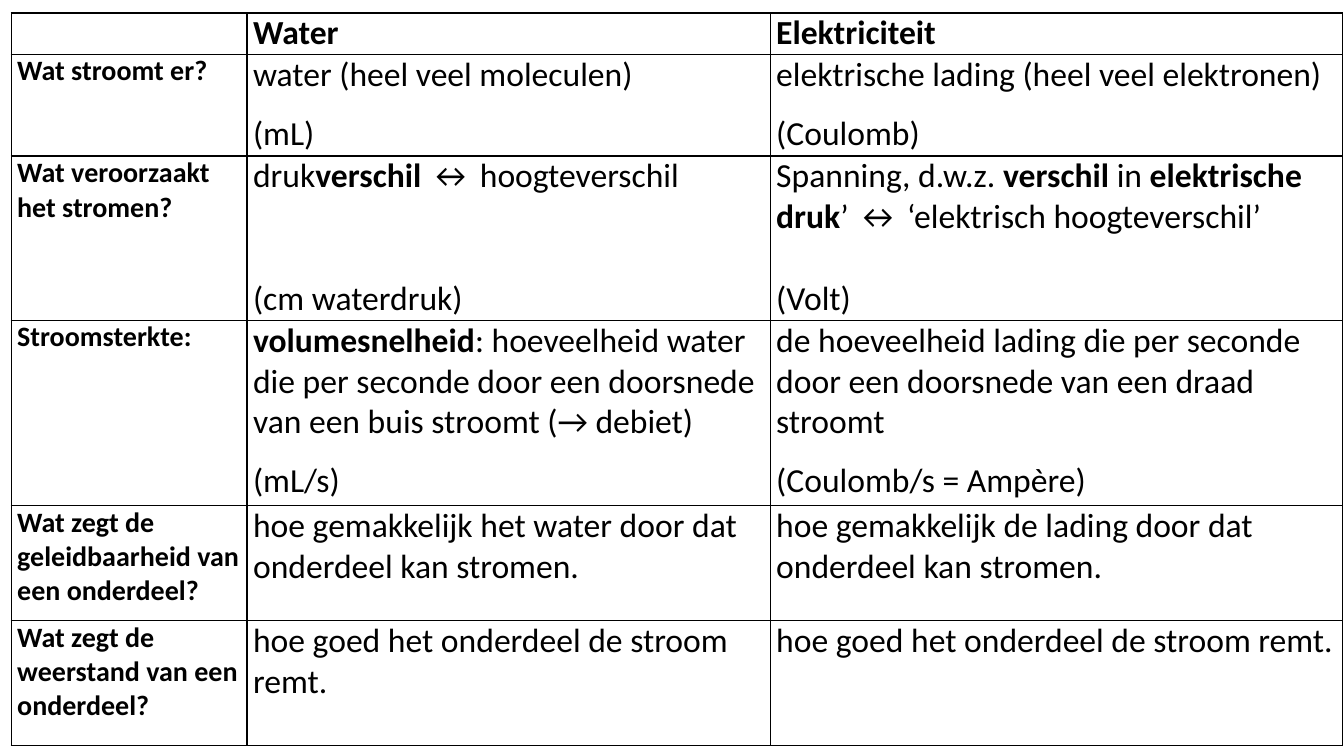
from pptx import Presentation
from pptx.dml.color import RGBColor as RGB
from pptx.oxml import parse_xml as parse
from pptx.oxml.ns import nsdecls
from pptx.util import Pt

BLACK = RGB(0, 0, 0)
FONT = "Calibri"
COLS = (168.5, 373.7, 409)
HEIGHTS = (29.5, 72.7, 89.3, 132.5, 82.1, 89.3)
SMALL, LINE = 12.8, 29.3
ROWS = (
    ("", ("**Water**",), ("**Elektriciteit**",)),
    ("Wat stroomt er?",
     ("water (heel veel moleculen)", "(mL)", SMALL),
     ("elektrische lading (heel veel elektronen)", "(Coulomb)", SMALL)),
    ("Wat veroorzaakt het stromen?",
     ("druk**verschil** ↔ hoogteverschil", "(cm waterdruk)", 2 * LINE),
     ("Spanning, d.w.z. **verschil** in **elektrische druk**’ ↔ "
      "‘elektrisch hoogteverschil’", "(Volt)", LINE)),
    ("Stroomsterkte:",
     ("**volumesnelheid**: hoeveelheid water die per seconde door een "
      "doorsnede van een buis stroomt (→ debiet)", "(mL/s)", SMALL),
     ("de hoeveelheid lading die per seconde door een doorsnede van een "
      "draad stroomt", "(Coulomb/s = Ampère)", SMALL)),
    ("Wat zegt de geleidbaarheid van een onderdeel?",
     ("hoe gemakkelijk het water door dat onderdeel kan stromen.",),
     ("hoe gemakkelijk de lading door dat onderdeel kan stromen.",)),
    ("Wat zegt de weerstand van een onderdeel?",
     ("hoe goed het onderdeel de stroom remt.",),
     ("hoe goed het onderdeel de stroom remt.",)),
)


def frame(cell):
    """Give a cell black borders, no fill and narrow margins."""
    props = cell._tc.get_or_add_tcPr()
    for side in "LRTB":
        props.append(parse(
            f'<a:ln{side} {nsdecls("a")} w="{Pt(1)}"><a:solidFill>'
            f'<a:srgbClr val="{BLACK}"/></a:solidFill></a:ln{side}>'))
    cell.fill.background()
    cell.margin_left = cell.margin_right = Pt(4.3)
    cell.margin_top = cell.margin_bottom = 0


def write(para, text, size):
    """Fill a paragraph, with the parts between double stars in bold."""
    font = para.font
    font.name, font.size = FONT, Pt(size)
    font.color.rgb = BLACK
    for i, part in enumerate(text.split("**")):
        if part:
            run = para.add_run()
            run.text, run.font.bold = part, i % 2 == 1


def answer(cell, text, unit="", gap=0):
    """Write a statement and, below a gap, its unit."""
    body = cell.text_frame
    write(body.paragraphs[0], text, 24)
    if unit:
        para = body.add_paragraph()
        para.space_before = Pt(gap)
        write(para, unit, 24)


def compare(slide, left, top):
    """Draw the table that compares water with electricity."""
    table = slide.shapes.add_table(
        len(ROWS), len(COLS), Pt(left), Pt(top),
        Pt(sum(COLS)), Pt(sum(HEIGHTS))).table
    table.first_row = table.horz_banding = False
    for col, width in zip(table.columns, COLS):
        col.width = Pt(width)
    for row, height, (label, *parts) in zip(table.rows, HEIGHTS, ROWS):
        row.height = Pt(height)
        head, *cells = row.cells
        for cell in (head, *cells):
            frame(cell)
        write(head.text_frame.paragraphs[0], f"**{label}**", 20)
        for cell, part in zip(cells, parts):
            answer(cell, *part)


def main():
    """Build and save the slide."""
    deck = Presentation()
    deck.slide_width, deck.slide_height = Pt(960), Pt(540)
    slide = deck.slides.add_slide(deck.slide_layouts[6])
    compare(slide, 8, 9.3)
    deck.save("out.pptx")


if __name__ == "__main__":
    main()
